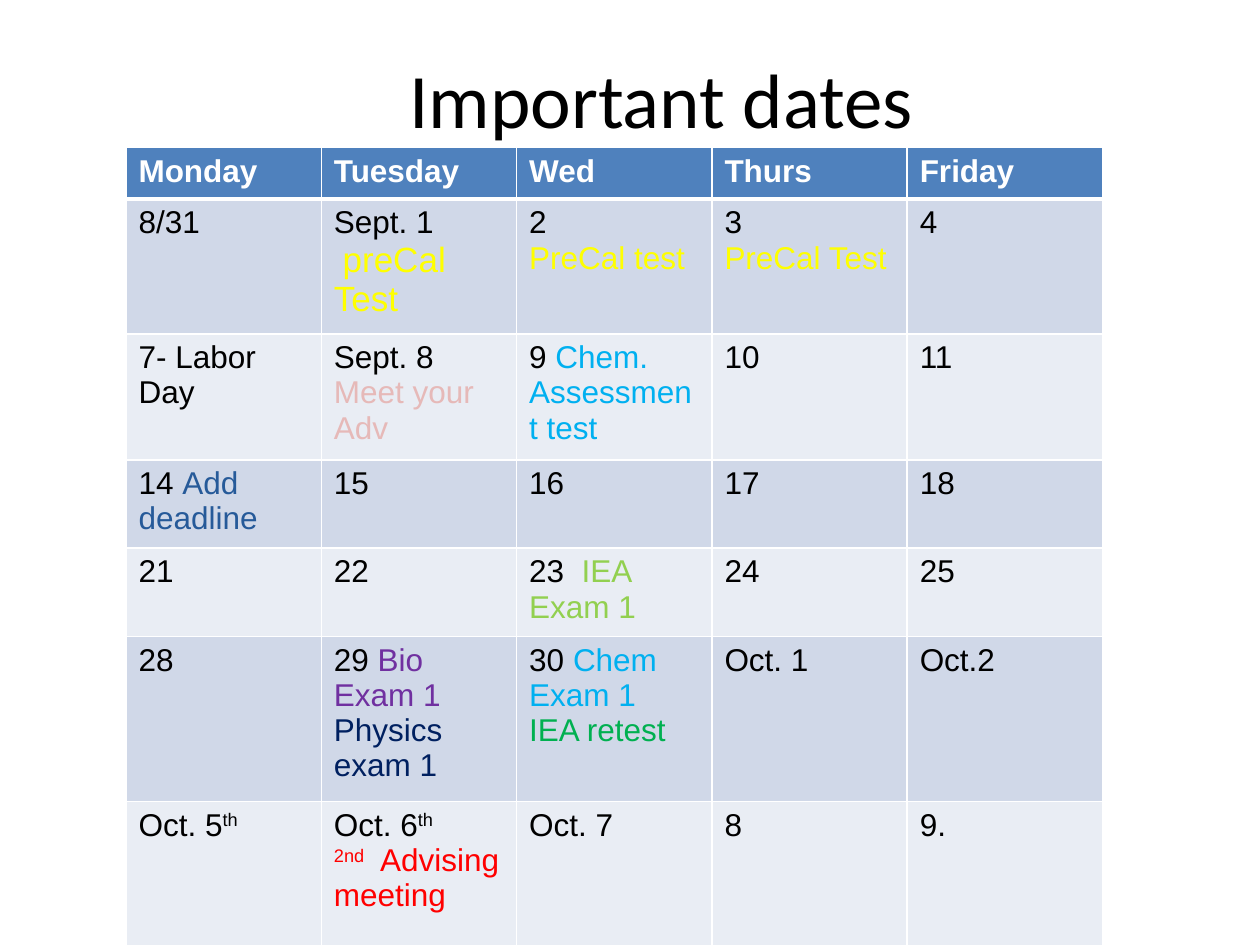
from lxml import etree
from pptx import Presentation
from pptx.dml.color import RGBColor
from pptx.enum.text import MSO_ANCHOR, PP_ALIGN
from pptx.oxml.ns import qn
from pptx.util import Inches, Pt

MIDDLE, CENTER = MSO_ANCHOR.MIDDLE, PP_ALIGN.CENTER

HEX = {
    "black": "000000", "white": "FFFFFF", "head": "4F81BD",
    "odd": "D0D8E8", "even": "E9EDF4", "yellow": "FFFF00",
    "pink": "E6B9B8", "sky": "00B0F0", "blue": "265A99",
    "lime": "92D050", "purple": "7030A0", "navy": "002060",
    "green": "00B050", "red": "FF0000",
}

# Content: a cell is plain text or a list of paragraphs,
# each a list of runs (text, colour, optional "big" or "super")
TITLE = "Important dates"
DAYS = ["Monday", "Tuesday", "Wed", "Thurs", "Friday"]
WEEKS = [
    ["8/31",
     [[("Sept. 1", "black")],
      [(" ", "black"), ("preCal  Test", "yellow", "big")]],
     [[("2", "black")], [("PreCal test", "yellow")]],
     [[("3", "black")], [("PreCal Test", "yellow")]],
     "4"],
    ["7- Labor Day",
     [[("Sept. 8", "black")], [("Meet your Adv", "pink")]],
     [[("9 ", "black"), ("Chem. Assessment test", "sky")]],
     "10", "11"],
    [[[("14 ", "black"), ("Add deadline", "blue")]],
     "15", "16", "17", "18"],
    ["21", "22",
     [[("23 ", "black"), (" IEA Exam 1", "lime")]],
     "24", "25"],
    ["28",
     [[("29 ", "black"), ("Bio Exam 1", "purple")],
      [("Physics exam 1", "navy")]],
     [[("30 ", "black"), ("Chem", "sky")],
      [("Exam 1", "sky")], [("IEA retest", "green")]],
     "Oct. 1", "Oct.2"],
    [[[("Oct. 5", "black"), ("th", "black", "super")]],
     [[("Oct. 6", "black"), ("th", "black", "super")],
      [("2nd", "red", "super"), ("  Advising meeting", "red")]],
     "Oct. 7", "8", "9."],
]
COL = 1.55
ROWS = [0.41, 1.07, 1, 0.7, 0.7, 1.31, 1.31]


def color(name):
    return RGBColor.from_string(HEX[name])


def style(run, size, tint, face="Arial", bold=False):
    font = run.font
    font.size, font.name, font.bold = Pt(size), face, bold
    font.color.rgb = color(tint)


def border(cell, base):
    props = cell._tc.get_or_add_tcPr()
    for side, width in (("L", 1), ("R", 1), ("T", 1), ("B", base)):
        line = etree.SubElement(props, qn("a:ln" + side), w=str(Pt(width)))
        fill = etree.SubElement(line, qn("a:solidFill"))
        etree.SubElement(fill, qn("a:srgbClr"), val=HEX["white"])


def write(cell, text, tint, bold):
    lines = [[(text, tint)]] if isinstance(text, str) else text
    frame = cell.text_frame
    for i, line in enumerate(lines):
        para = frame.add_paragraph() if i else frame.paragraphs[0]
        for words, shade, *mark in line:
            run = para.add_run()
            run.text = words
            style(run, 20 if "big" in mark else 18, shade, bold=bold)
            if "super" in mark:
                run.font._element.set("baseline", "30000")


deck = Presentation()
deck.slide_width, deck.slide_height = Inches(10), Inches(7.5)
slide = deck.slides.add_slide(deck.slide_layouts[5])

# Title
title = slide.shapes.title
title.left, title.top = Inches(1), Inches(0.3)
title.width, title.height = Inches(8.5), Inches(0.95)
title.text_frame.text = TITLE
title.text_frame.vertical_anchor = MIDDLE
para = title.text_frame.paragraphs[0]
para.alignment = CENTER
style(para.runs[0], 44, "black", "Calibri")

# Calendar
grid = slide.shapes.add_table(
    len(ROWS), len(DAYS), Inches(1), Inches(1.17),
    Inches(COL * len(DAYS)), Inches(sum(ROWS))).table
for col in grid.columns:
    col.width = Inches(COL)
for r, (tall, week) in enumerate(zip(ROWS, [DAYS] + WEEKS)):
    grid.rows[r].height = Inches(tall)
    top = r == 0
    back = "head" if top else "odd" if r % 2 else "even"
    for c, text in enumerate(week):
        cell = grid.cell(r, c)
        border(cell, 3 if top else 1)
        cell.fill.solid()
        cell.fill.fore_color.rgb = color(back)
        write(cell, text, "white" if top else "black", top)
    if r == 1:
        # The thick rule under the header is shared with the first week
        for cell in grid.rows[r].cells:
            cell._tc.tcPr.find(qn("a:lnT")).set("w", str(Pt(3)))

deck.save("out.pptx")
